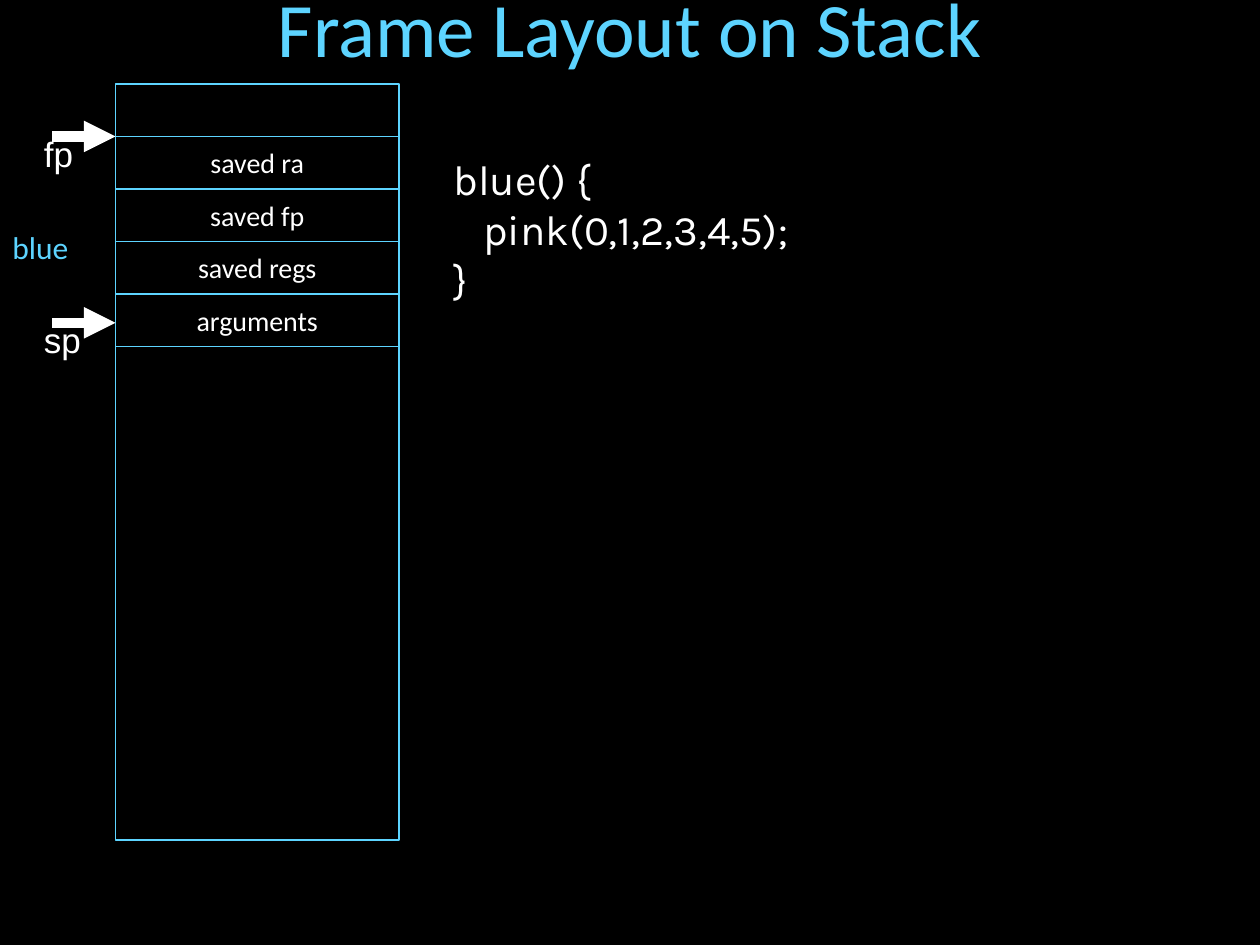
import pptx
import pptx.util
import pptx.dml.color
import pptx.enum.shapes
import pptx.enum.text
import pptx.oxml
import pptx.oxml.ns
from pptx.util import Pt

COLORS = {"background": "000000", "accent": "5DD4FF", "text": "FFFFFF"}
ALIGN = pptx.enum.text.PP_ALIGN
ANCHOR = pptx.enum.text.MSO_ANCHOR


def rgb(name):
    return pptx.dml.color.RGBColor.from_string(COLORS[name])


def write(shape, lines, font, size, color, align=ALIGN.LEFT, anchor=ANCHOR.TOP, wrap=True):
    """Fill a shape with one formatted paragraph per line."""
    frame = shape.text_frame
    frame.text = "\n".join(lines)
    frame.word_wrap = wrap
    frame.vertical_anchor = anchor
    for paragraph in frame.paragraphs:
        paragraph.alignment = align
        for key, value in {"name": font, "size": Pt(size), "bold": False}.items():
            setattr(paragraph.font, key, value)
        paragraph.font.color.rgb = rgb(color)


deck = pptx.Presentation()
deck.slide_width, deck.slide_height = Pt(720), Pt(540)
slide = deck.slides.add_slide(deck.slide_layouts[5])
slide.background.fill.solid()
slide.background.fill.fore_color.rgb = rgb("background")
shapes = slide.shapes

title = shapes.title
title.left, title.top, title.width, title.height = Pt(54), Pt(-24), Pt(612), Pt(78)
write(title, ["Frame Layout on Stack"], "Calibri", 44, "accent", ALIGN.CENTER, ANCHOR.MIDDLE)

# Stack outline, then its slots from top to bottom
stack_left, stack_width = 66, 162
slot_top, slot_height = 78, 30
slots = ["saved ra", "saved fp", "saved regs", "arguments"]
boxes = [("", 48, 432)]
boxes += [(slot, slot_top + i * slot_height, slot_height) for i, slot in enumerate(slots)]
for label, top, height in boxes:
    box = shapes.add_shape(pptx.enum.shapes.MSO_SHAPE.RECTANGLE,
                           Pt(stack_left), Pt(top), Pt(stack_width), Pt(height))
    box.shadow.inherit = False
    box.fill.background()
    box.line.color.rgb = rgb("accent")
    box.line.width = Pt(0.75)
    if label:
        write(box, [label], "Calibri", 16, "text", ALIGN.CENTER, ANCHOR.MIDDLE, False)

# Pointers into the stack
for register, y in [("fp", 78), ("sp", 184.5)]:
    arrow = shapes.add_connector(pptx.enum.shapes.MSO_CONNECTOR.STRAIGHT,
                                 Pt(30), Pt(y), Pt(stack_left), Pt(y))
    arrow.line.color.rgb = rgb("text")
    arrow.line.width = Pt(6)
    arrow.line._get_or_add_ln().append(pptx.oxml.parse_xml(
        '<a:tailEnd %s type="triangle"/>' % pptx.oxml.ns.nsdecls("a")))
    arrow._element.spPr.append(pptx.oxml.parse_xml(
        "<a:effectLst %s/>" % pptx.oxml.ns.nsdecls("a")))
    register_label = shapes.add_textbox(Pt(18), Pt(y - 6), Pt(42), Pt(31.5))
    write(register_label, [register], "Arial", 20, "text")

frame_owner = shapes.add_textbox(Pt(0), Pt(126.75), Pt(46.5), Pt(29))
write(frame_owner, ["blue"], "Calibri", 18, "accent", wrap=False)

code = shapes.add_textbox(Pt(252), Pt(84), Pt(468), Pt(94.5))
write(code, ["blue() {", "pink(0,1,2,3,4,5);", "}"], "Karla", 24, "text")
code.text_frame.paragraphs[1]._p.get_or_add_pPr().set("marL", str(Pt(17)))

deck.save("out.pptx")
